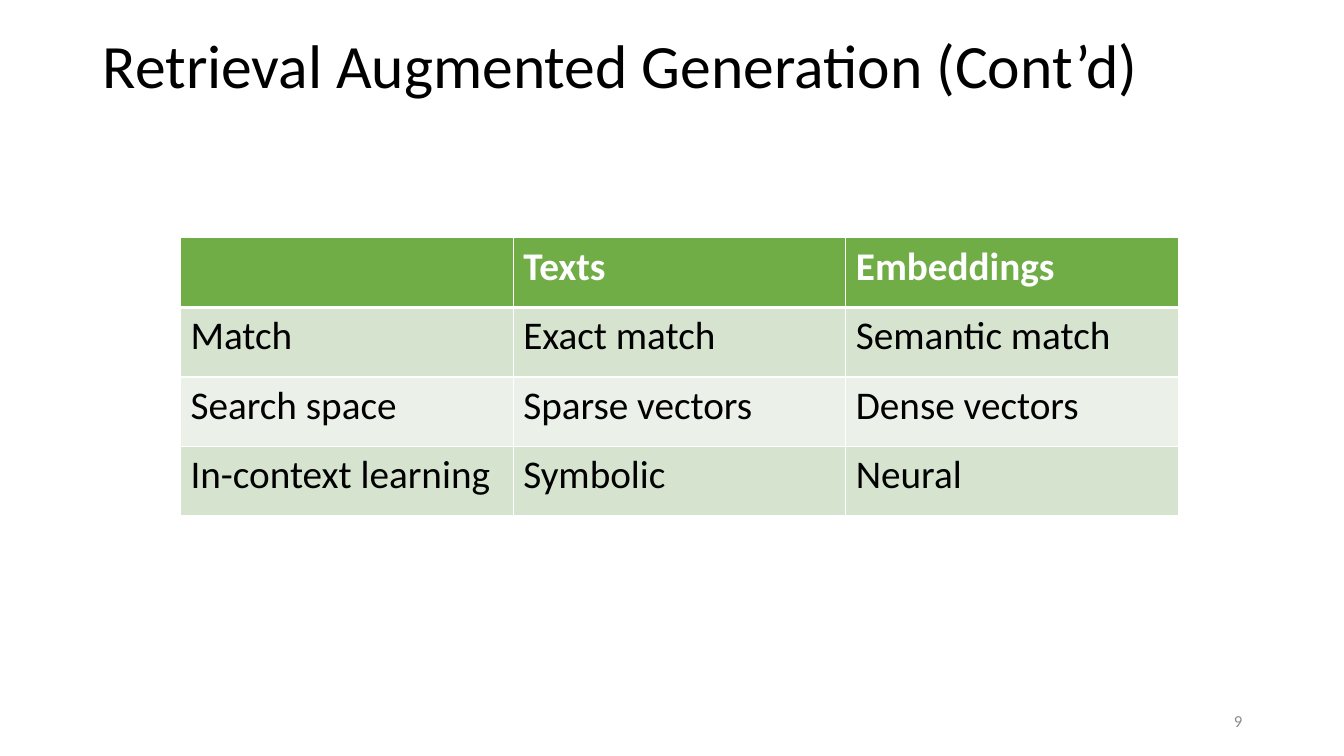
import pptx
import pptx.dml.color
import pptx.enum.text
import pptx.oxml
import pptx.oxml.ns
import pptx.util
from pptx.util import Inches

FONT = "Calibri"
WHITE, BLACK, GREY = "FFFFFF", "000000", "8C8C8C"
HEADER_GREEN, BAND_DARK, BAND_LIGHT = "70AD47", "D5E3CF", "EBF1E9"

ROWS = [
    ["", "Texts", "Embeddings"],
    ["Match", "Exact match", "Semantic match"],
    ["Search space", "Sparse vectors", "Dense vectors"],
    ["In-context learning", "Symbolic", "Neural"],
]


def color(value):
    return pptx.dml.color.RGBColor.from_string(value)


def style_paragraph(paragraph, size, font_color, bold=False):
    paragraph.font.name = FONT
    paragraph.font.size = pptx.util.Pt(size)
    paragraph.font.bold = bold
    paragraph.font.color.rgb = color(font_color)


def add_text(slide, text, left, top, width, height, size, font_color,
             align=pptx.enum.text.PP_ALIGN.LEFT, line_spacing=1.0):
    box = slide.shapes.add_textbox(
        Inches(left), Inches(top), Inches(width), Inches(height))
    frame = box.text_frame
    frame.word_wrap = True
    frame.vertical_anchor = pptx.enum.text.MSO_ANCHOR.MIDDLE
    paragraph = frame.paragraphs[0]
    paragraph.text = text
    paragraph.alignment = align
    paragraph.line_spacing = line_spacing
    style_paragraph(paragraph, size, font_color)


def set_borders(cell, widths):
    """Draw white borders; widths maps L, R, T, B to points, in that order."""
    properties = cell._tc.get_or_add_tcPr()
    for index, (side, points) in enumerate(widths.items()):
        line = pptx.oxml.parse_xml(
            f'<a:ln{side} {pptx.oxml.ns.nsdecls("a")} w="{pptx.util.Pt(points)}">'
            f'<a:solidFill><a:srgbClr val="{WHITE}"/></a:solidFill></a:ln{side}>')
        properties.insert(index, line)


def add_comparison_table(slide, rows, left, top, column_width, row_height):
    row_count, column_count = len(rows), len(rows[0])
    table = slide.shapes.add_table(
        row_count, column_count, Inches(left), Inches(top),
        Inches(column_width * column_count), Inches(row_height * row_count)).table
    for row_index, row in enumerate(rows):
        header = row_index == 0
        band = BAND_DARK if row_index % 2 else BAND_LIGHT
        for column_index, text in enumerate(row):
            cell = table.cell(row_index, column_index)
            cell.fill.solid()
            cell.fill.fore_color.rgb = color(HEADER_GREEN if header else band)
            # A thicker rule separates the header from the body
            set_borders(cell, {"L": 1, "R": 1,
                               "T": 3 if row_index == 1 else 1,
                               "B": 3 if header else 1})
            paragraph = cell.text_frame.paragraphs[0]
            paragraph.text = text
            style_paragraph(paragraph, 28, WHITE if header else BLACK, header)


def main():
    deck = pptx.Presentation()
    deck.slide_width, deck.slide_height = Inches(13.33), Inches(7.5)
    slide = deck.slides.add_slide(deck.slide_layouts[6])

    # Title
    add_text(slide, "Retrieval Augmented Generation (Cont’d)",
             0.92, 0.02, 11.5, 1.33, 44, BLACK, line_spacing=0.9)

    # Texts compared with embeddings
    add_comparison_table(slide, ROWS, 1.79, 2.36, 3.3, 0.69)

    # Slide number
    add_text(slide, "9", 9.42, 6.95, 3, 0.4, 12, GREY,
             align=pptx.enum.text.PP_ALIGN.RIGHT)

    deck.save("out.pptx")


if __name__ == "__main__":
    main()
